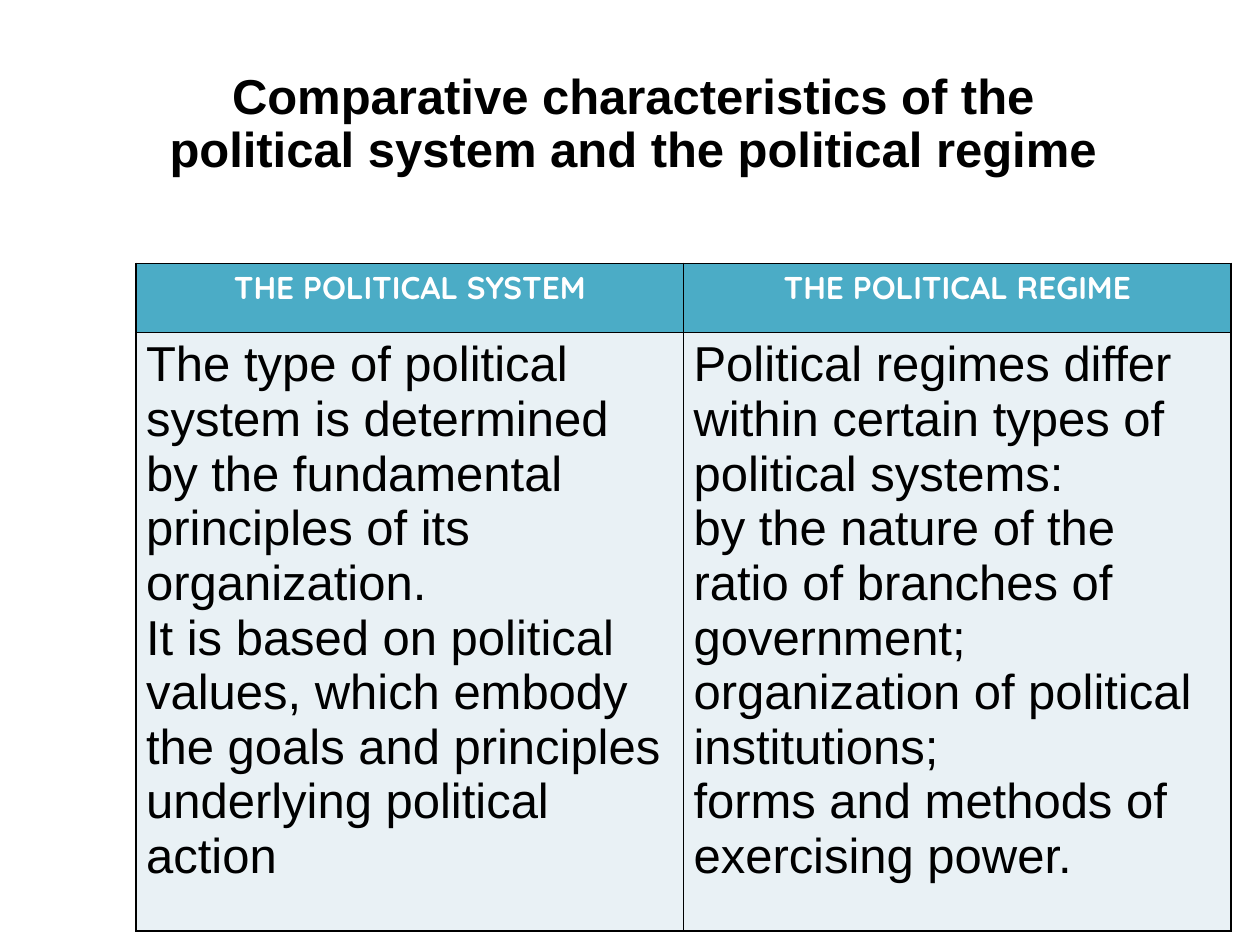
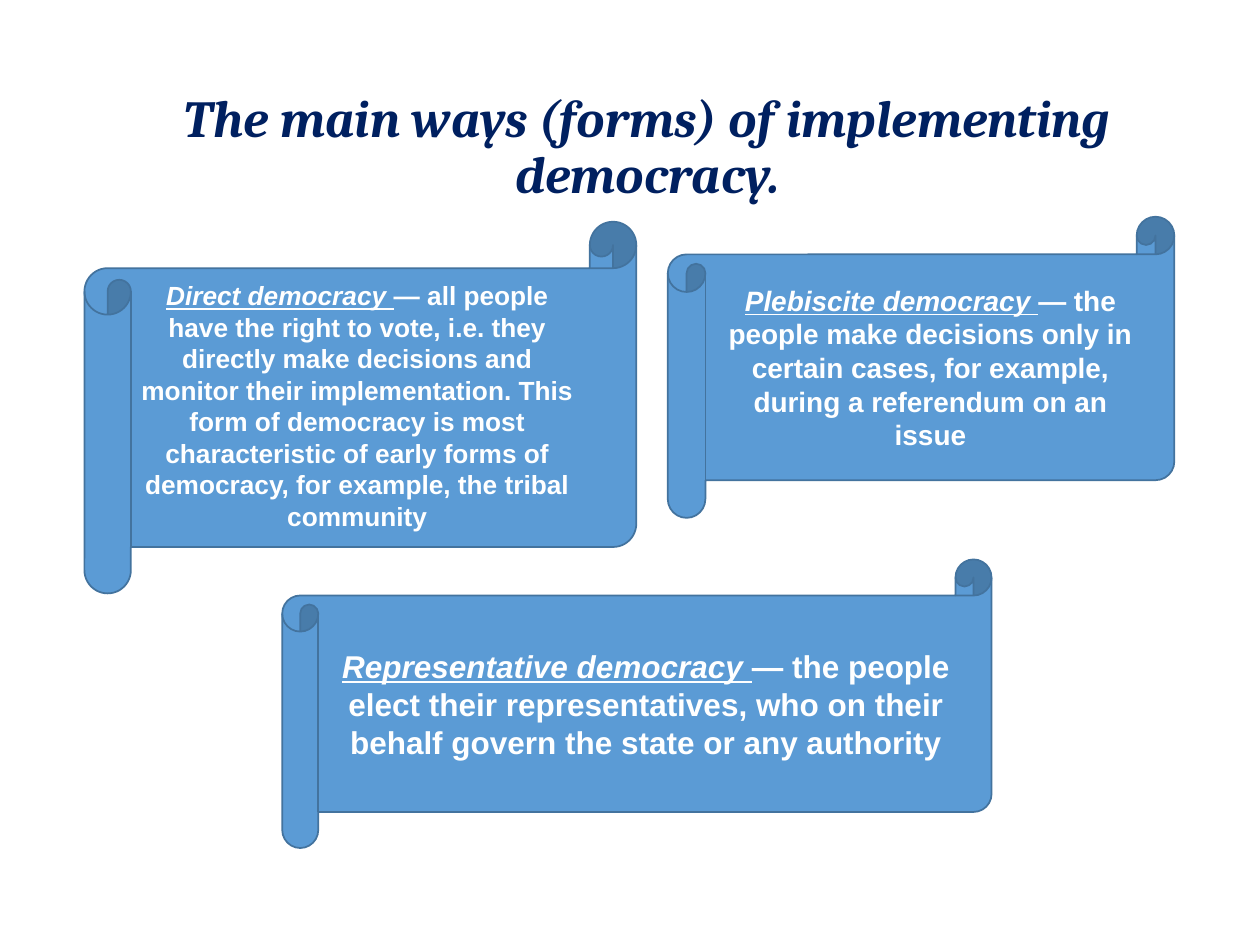
from pptx import Presentation
from pptx.dml.color import RGBColor
from pptx.enum.shapes import MSO_SHAPE as Shape
from pptx.enum.text import MSO_ANCHOR as Anchor, PP_ALIGN as Align
from pptx.oxml import parse_xml
from pptx.oxml.ns import nsdecls
from pptx.util import Inches, Pt

# Colours
BLACK = RGBColor(0x00, 0x00, 0x00)
WHITE = RGBColor(0xFF, 0xFF, 0xFF)
NAVY = RGBColor(0x00, 0x20, 0x60)
TEAL = RGBColor(0x4B, 0xAC, 0xC6)
PALE = RGBColor(0xE9, 0xF1, 0xF5)
BLUE = RGBColor(0x5B, 0x9B, 0xD5)
EDGE = RGBColor(0x43, 0x73, 0x9E)

# Content
TITLES = [
    "Comparative characteristics of the political system and the political regime",
    "The main ways (forms) of implementing democracy.",
]
COLS = {
    "THE POLITICAL SYSTEM": [
        "The type of political system is determined by the fundamental "
        "principles of its organization.",
        "It is based on political values, which embody the goals and "
        "principles underlying political action",
    ],
    "THE POLITICAL REGIME": [
        "Political regimes differ within certain types of political systems:",
        "by the nature of the ratio of branches of government;",
        "organization of political institutions;",
        "forms and methods of exercising power.",
    ],
}
# term, meaning, text size, scroll place, place of a text box of its own
FORMS = [
    ("Direct democracy ",
     "— all people have the right to vote, i.e. they directly make decisions "
     "and monitor their implementation. This form of democracy is most "
     "characteristic of early forms of democracy, for example, the tribal "
     "community",
     15, (0.67, 1.76, 4.38, 2.95), (1, 2.17, 3.67, 2.12)),
    ("Plebiscite democracy ",
     "— the people make decisions only in certain cases, for example, during "
     "a referendum on an issue",
     16, (5.3, 1.72, 4.02, 2.39), None),
    ("Representative democracy ",
     "— the people elect their representatives, who on their behalf govern "
     "the state or any authority",
     18, (2.24, 4.44, 5.63, 2.29), None),
]

# Table grid
GRID = (1.08, 2.09, 8.69, 5.29)
HEAD = 0.55
PAD = (0.08, 0.04)


def write(frame, paras, size, color, face="Arial", align=Align.CENTER,
          bold=False, italic=False, lead=None, gap=None, anchor=None):
    """Fill a frame; lead is an underlined italic start of the first line."""
    frame.word_wrap = True
    if anchor is not None:
        frame.vertical_anchor = anchor
    for i, text in enumerate(paras):
        para = frame.paragraphs[0] if i == 0 else frame.add_paragraph()
        para.alignment = align
        if gap:
            para.line_spacing = gap
        runs = [(text, italic, False)]
        if lead and i == 0:
            runs.insert(0, (lead, True, True))
        for part, slant, under in runs:
            run = para.add_run()
            run.text = part
            font = run.font
            font.name, font.size = face, Pt(size)
            font.bold, font.italic, font.underline = bold, slant, under
            font.color.rgb = color


def place(box):
    return [Inches(n) for n in box]


def add_title(slide, text, box, size, color, **style):
    frame = slide.shapes.add_textbox(*place(box)).text_frame
    write(frame, [text], size, color, bold=True, gap=0.9,
          anchor=Anchor.MIDDLE, **style)


def dress(cell, fill):
    """Give a cell its fill, margins and thin black borders."""
    cell.margin_left = cell.margin_right = Inches(PAD[0])
    cell.margin_top = cell.margin_bottom = Inches(PAD[1])
    props = cell._tc.get_or_add_tcPr()
    for side in ("lnL", "lnR", "lnT", "lnB"):
        props.append(parse_xml(
            f'<a:{side} {nsdecls("a")} w="{Pt(1)}"><a:solidFill>'
            f'<a:srgbClr val="{BLACK}"/></a:solidFill></a:{side}>'))
    cell.fill.solid()
    cell.fill.fore_color.rgb = fill


def add_grid(slide):
    table = slide.shapes.add_table(2, len(COLS), *place(GRID)).table
    table.first_row = table.horz_banding = False
    table.rows[0].height = Inches(HEAD)
    table.rows[1].height = Inches(GRID[3] - HEAD)
    for i, (head, body) in enumerate(COLS.items()):
        table.columns[i].width = Inches(GRID[2] / len(COLS))
        top, low = table.cell(0, i), table.cell(1, i)
        dress(top, TEAL)
        dress(low, PALE)
        write(top.text_frame, [head], 18, WHITE, face="Quicksand", bold=True)
        write(low.text_frame, body, 28, BLACK, align=Align.LEFT)


def add_scroll(slide, term, text, size, box, inner):
    scroll = slide.shapes.add_shape(Shape.HORIZONTAL_SCROLL, *place(box))
    scroll.shadow.inherit = False
    scroll.fill.solid()
    scroll.fill.fore_color.rgb = BLUE
    scroll.line.color.rgb = EDGE
    scroll.line.width = Pt(1)
    host = slide.shapes.add_textbox(*place(inner)) if inner else scroll
    write(host.text_frame, [text], size, WHITE, bold=True, lead=term,
          anchor=Anchor.TOP if inner else Anchor.MIDDLE)


def main():
    deck = Presentation()
    deck.slide_width, deck.slide_height = Inches(10), Inches(7.5)
    blank = deck.slide_layouts[6]

    # System and regime compared
    slide = deck.slides.add_slide(blank)
    add_title(slide, TITLES[0], (0.98, 0.52, 8.09, 0.94), 28, BLACK)
    add_grid(slide)

    # Forms of democracy
    slide = deck.slides.add_slide(blank)
    add_title(slide, TITLES[1], (0.71, 0.93, 8.86, 0.5), 29.7, NAVY,
              face="Cambria", italic=True)
    for form in FORMS:
        add_scroll(slide, *form)

    deck.save("out.pptx")


if __name__ == "__main__":
    main()
